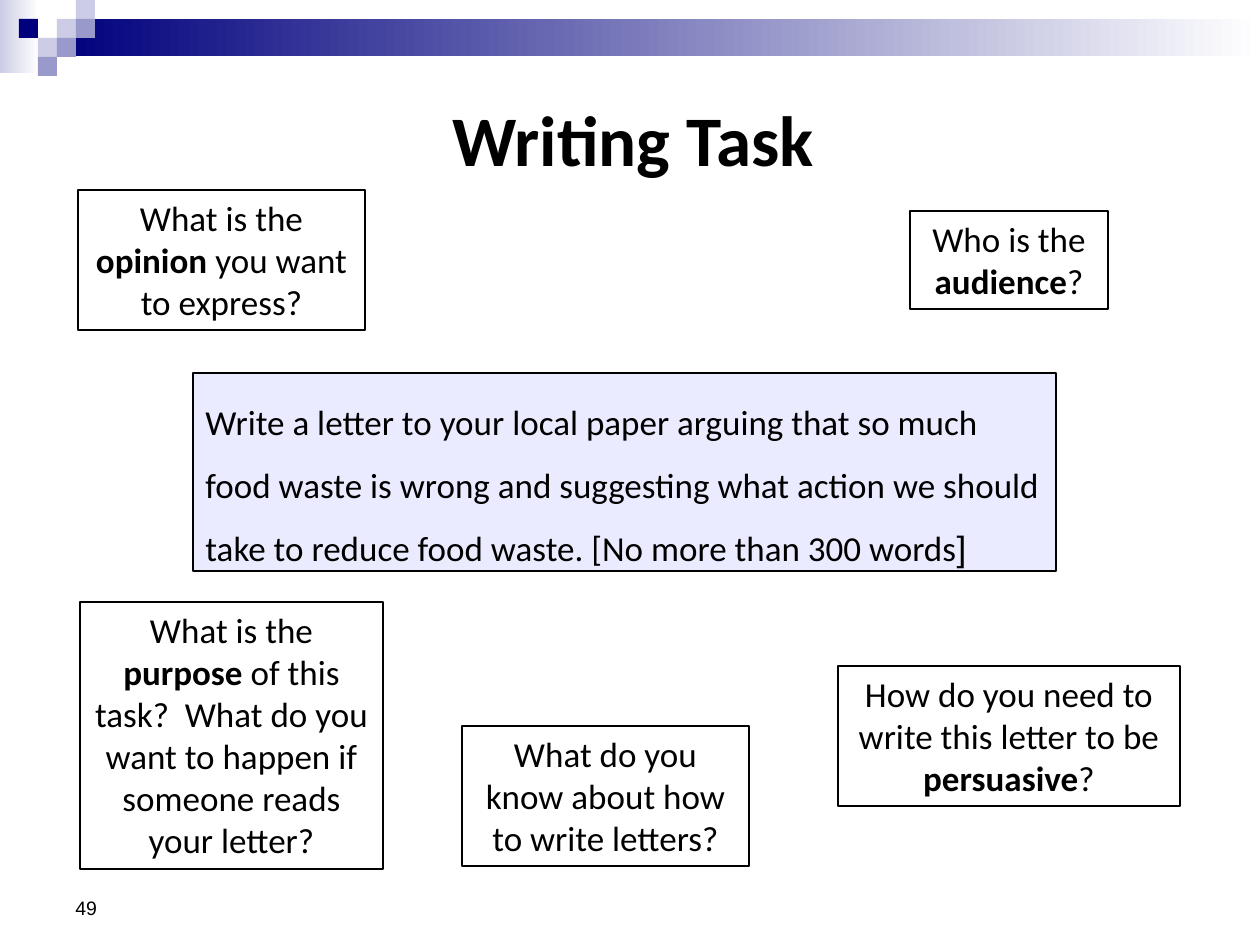
from dataclasses import dataclass

from pptx import Presentation
from pptx.dml.color import RGBColor
from pptx.enum.shapes import MSO_SHAPE
from pptx.enum.text import MSO_ANCHOR, PP_ALIGN
from pptx.util import Emu, Pt

PX_PER_INCH = 126
CELL = 19
COLORS = {
    "navy": "00007D",
    "lilac": "CCCCE6",
    "violet": "9999CC",
    "pale": "EBEBFF",
    "white": "FFFFFF",
    "black": "000000",
}


@dataclass(frozen=True)
class Box:
    left: int
    top: int
    width: int
    height: int

    def emu(self) -> list[Emu]:
        return [px(n) for n in (self.left, self.top, self.width, self.height)]


@dataclass(frozen=True)
class Prompt:
    box: Box
    before: str
    keyword: str = ""
    after: str = ""


@dataclass(frozen=True)
class Tile:
    column: int
    row: int
    color: str


# The bands are gradients that fade to white
BANDS = [(Box(0, 0, 39, 73), "lilac"), (Box(57, 19, 1203, 37), "navy")]
TILES = [
    Tile(3, 1, "lilac"),
    Tile(4, 0, "lilac"),
    Tile(4, 1, "violet"),
    Tile(2, 2, "lilac"),
    Tile(1, 1, "navy"),
    Tile(3, 2, "violet"),
    Tile(2, 3, "violet"),
]
PROMPTS = [
    Prompt(Box(910, 211, 198, 98), "Who is the ", "audience", "?"),
    Prompt(Box(78, 190, 287, 140), "What is the ", "opinion", " you want to express?"),
    Prompt(Box(80, 602, 303, 267), "What is the ", "purpose",
           " of this task?  What do you want to happen if someone reads your letter?"),
    Prompt(Box(838, 666, 342, 140), "How do you need to write this letter to be ",
           "persuasive", "?"),
    Prompt(Box(462, 726, 287, 140), "What do you know about how to write letters?"),
]


def px(n: int) -> Emu:
    return Emu(round(n * 914400 / PX_PER_INCH))


def rgb(name: str) -> RGBColor:
    return RGBColor.from_string(COLORS[name])


def set_font(target, size: float, face: str = "Calibri") -> None:
    target.font.size = Pt(size)
    target.font.name = face
    target.font.color.rgb = rgb("black")


def add_rect(slide, box: Box):
    rect = slide.shapes.add_shape(MSO_SHAPE.RECTANGLE, *box.emu())
    rect.shadow.inherit = False
    rect.line.fill.background()
    return rect


def add_band(slide, box: Box, color: str) -> None:
    band = add_rect(slide, box)
    band.fill.gradient()
    band.fill.gradient_angle = 0
    for stop, name in zip(band.fill.gradient_stops, (color, "white")):
        stop.color.rgb = rgb(name)


def add_tile(slide, tile: Tile) -> None:
    square = add_rect(slide, Box(tile.column * CELL, tile.row * CELL, CELL, CELL))
    square.fill.solid()
    square.fill.fore_color.rgb = rgb(tile.color)


def add_framed_text(slide, box: Box, align: PP_ALIGN):
    """Outline a box and return it with its styled first paragraph."""
    frame = add_rect(slide, box)
    frame.fill.background()
    frame.line.color.rgb = rgb("black")
    frame.line.width = Pt(0.75)
    frame.text_frame.word_wrap = True
    frame.text_frame.vertical_anchor = MSO_ANCHOR.TOP
    paragraph = frame.text_frame.paragraphs[0]
    paragraph.alignment = align
    set_font(paragraph, 20)
    return frame, paragraph


def add_run(paragraph, text: str):
    run = paragraph.add_run()
    run.text = text
    set_font(run, 20)
    return run


def add_prompt(slide, prompt: Prompt) -> None:
    _, paragraph = add_framed_text(slide, prompt.box, PP_ALIGN.CENTER)
    for text in (prompt.before, prompt.keyword, prompt.after):
        if text:
            add_run(paragraph, text).font.bold = text == prompt.keyword


def add_task(slide) -> None:
    task, paragraph = add_framed_text(slide, Box(193, 373, 863, 198), PP_ALIGN.LEFT)
    task.fill.solid()
    task.fill.fore_color.rgb = rgb("pale")
    paragraph.line_spacing = 1.5
    add_run(paragraph, "Write a letter to your local paper arguing that so much food waste "
                       "is wrong and suggesting what action we should take to reduce food "
                       "waste. [No more than 300 words")
    add_run(paragraph, "]").font.name = "Arial"


def format_title(slide) -> None:
    title = slide.shapes.title
    title.left, title.top, title.width, title.height = Box(66, 86, 1134, 105).emu()
    title.text_frame.text = "Writing Task"
    title.text_frame.vertical_anchor = MSO_ANCHOR.MIDDLE
    heading = title.text_frame.paragraphs[0]
    heading.alignment = PP_ALIGN.CENTER
    set_font(heading, 40.6)
    heading.font.bold = True


def add_page_number(slide) -> None:
    page = slide.shapes.add_textbox(*Box(63, 861, 294, 65).emu()).text_frame
    page.word_wrap = True
    page.vertical_anchor = MSO_ANCHOR.BOTTOM
    page.text = "49"
    set_font(page.paragraphs[0], 11.1, "Arial")


def main() -> None:
    deck = Presentation()
    deck.slide_width, deck.slide_height = px(1260), px(945)
    slide = deck.slides.add_slide(deck.slide_layouts[5])

    # Corner decoration
    for box, color in BANDS:
        add_band(slide, box, color)
    for tile in TILES:
        add_tile(slide, tile)

    # Task and the questions around it
    format_title(slide)
    add_task(slide)
    for prompt in PROMPTS:
        add_prompt(slide, prompt)
    add_page_number(slide)

    deck.save("out.pptx")


if __name__ == "__main__":
    main()
